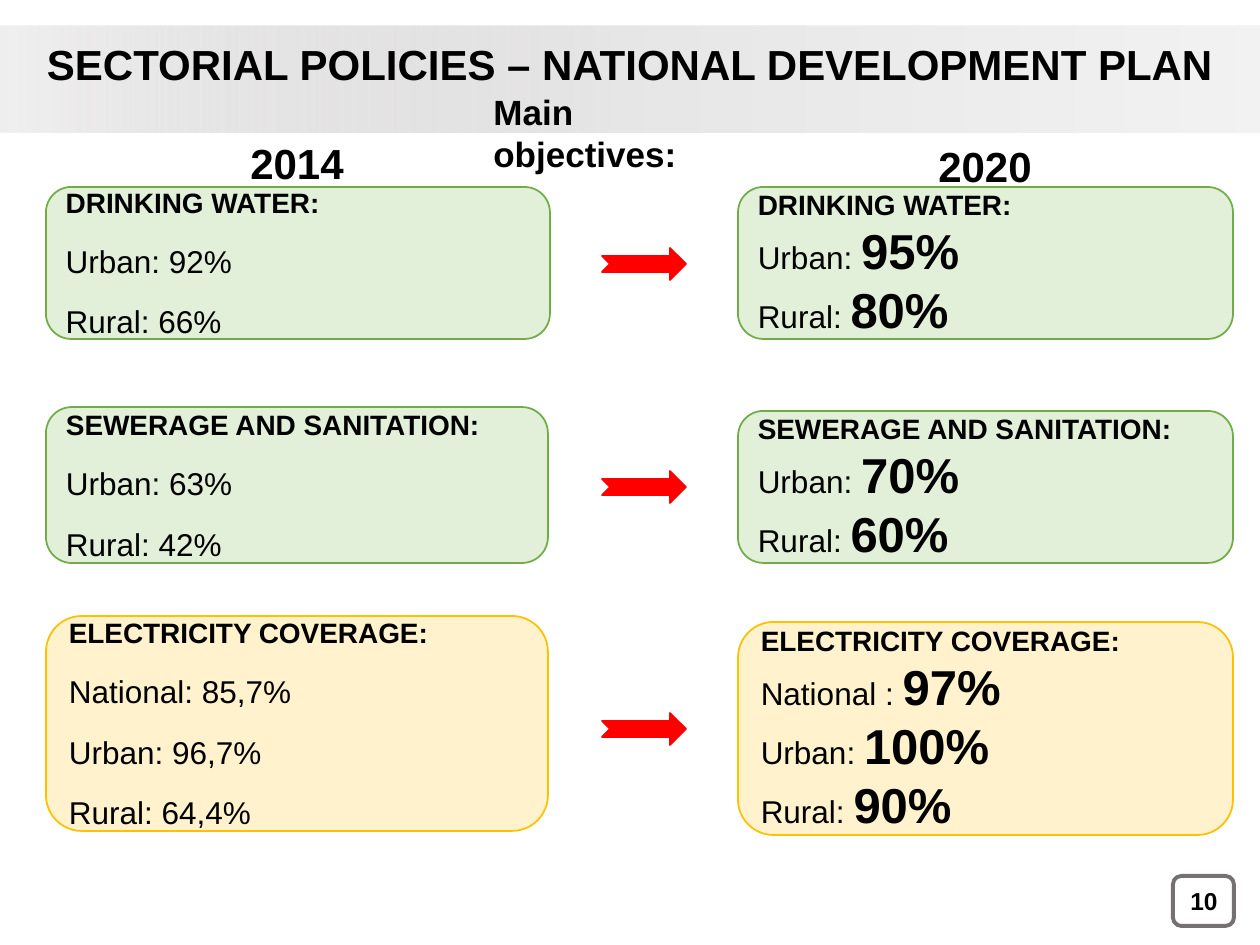
from lxml.etree import SubElement
from pptx import Presentation
from pptx.dml.color import RGBColor
from pptx.enum.shapes import MSO_SHAPE
from pptx.enum.text import MSO_ANCHOR, MSO_AUTO_SIZE, PP_ALIGN
from pptx.oxml.ns import qn
from pptx.util import Pt

SCALE = 914400 / 126
COLORS = {
    "black": "000000", "red": "FF0000", "frame": "767171",
    "green": "E2F0D9", "leaf": "70AD47", "cream": "FFF2CC", "gold": "FFC000",
}
BAND = [(0, "C3C2C2", 25), (49, "E7E6E6", 100), (100, "F2F2F2", 100)]
# Each row: heading, fill, line, arrow top, (left top, width, height), (right top, height), rates
ROWS = [
    ("DRINKING WATER:", "green", "leaf", 248, (187, 504, 152), (187, 152),
     [("Urban: ", "92%", "95%"), ("Rural: ", "66%", "80%")]),
    ("SEWERAGE AND SANITATION:", "green", "leaf", 471, (407, 502, 156), (411, 152),
     [("Urban: ", "63%", "70%"), ("Rural: ", "42%", "60%")]),
    ("ELECTRICITY COVERAGE:", "cream", "gold", 713, (616, 502, 215), (622, 213),
     [("National: ", "85,7%", "97%"), ("Urban: ", "96,7%", "100%"),
      ("Rural: ", "64,4%", "90%")]),
]


def px(*vals):
    return [round(v * SCALE) for v in vals]


def color(name):
    return RGBColor.from_string(COLORS[name])


def style(run, size, bold=True):
    font = run.font
    font.name, font.size, font.bold = "Arial", Pt(size), bold
    font.color.rgb = color("black")


def put(frame, text, size, align):
    frame.text = text
    para = frame.paragraphs[0]
    para.alignment = align
    style(para.runs[0], size)


def label(slide, box, text, size, align, wrap=True):
    frame = slide.shapes.add_textbox(*px(*box)).text_frame
    frame.word_wrap = wrap
    put(frame, text, size, align)
    return frame


def block(slide, kind, box, fill, line, width=1):
    shape = slide.shapes.add_shape(kind, *px(*box))
    shape.shadow.inherit = False
    if fill:
        shape.fill.solid()
        shape.fill.fore_color.rgb = color(fill)
    else:
        shape.fill.background()
    if line:
        shape.line.color.rgb = color(line)
        shape.line.width = Pt(width)
    else:
        shape.line.fill.background()
    return shape


def band(slide):
    """Add the grey strip behind the title, fading in from the left."""
    shape = block(slide, MSO_SHAPE.RECTANGLE, (0, 26, 1260, 107), None, None)
    shape.fill.gradient()
    shape.fill.gradient_angle = 0
    stops = shape._element.spPr.find(".//" + qn("a:gsLst"))
    for stop in list(stops):
        stops.remove(stop)
    for pos, tone, alpha in BAND:
        stop = SubElement(stops, qn("a:gs"), pos=str(pos * 1000))
        clr = SubElement(stop, qn("a:srgbClr"), val=tone)
        if alpha < 100:
            SubElement(clr, qn("a:alpha"), val=str(alpha * 1000))
    slide.shapes.title._element.addprevious(shape._element)


def title(slide, text):
    shape = slide.shapes.title
    shape.left, shape.top, shape.width, shape.height = px(0, 32, 1260, 63)
    frame = shape.text_frame
    frame.auto_size = MSO_AUTO_SIZE.NONE
    frame.vertical_anchor = MSO_ANCHOR.TOP
    put(frame, text, 24, PP_ALIGN.CENTER)


def card(slide, box, fill, line, head, rates, size, bold, gap):
    shape = block(slide, MSO_SHAPE.ROUNDED_RECTANGLE, box, fill, line)
    frame = shape.text_frame
    frame.word_wrap = True
    frame.vertical_anchor = MSO_ANCHOR.MIDDLE
    put(frame, head, 16, PP_ALIGN.LEFT)
    for name, rate in rates:
        para = frame.add_paragraph()
        para.alignment = PP_ALIGN.LEFT
        para.space_before = Pt(gap)
        for text, pts, heavy in ((name, 18, False), (rate, size, bold)):
            run = para.add_run()
            run.text = text
            style(run, pts, heavy)


def row(slide, head, fill, line, mid, left, right, rates):
    top, width, height = left
    old = [(name, was) for name, was, _ in rates]
    card(slide, (46, top, width, height), fill, line, head, old, 18, False, 13)
    top, height = right
    new = [(name.replace("National:", "National :"), goal) for name, _, goal in rates]
    card(slide, (738, top, 495, height), fill, line, head, new, 28, True, 0)
    block(slide, MSO_SHAPE.NOTCHED_RIGHT_ARROW, (602, mid, 84, 32), "red", "red")


def main():
    deck = Presentation()
    deck.slide_width, deck.slide_height = px(1260, 945)
    slide = deck.slides.add_slide(deck.slide_layouts[5])
    title(slide, "SECTORIAL POLICIES – NATIONAL DEVELOPMENT PLAN")
    band(slide)
    label(slide, (481, 84, 297, 55), "Main objectives:", 20, PP_ALIGN.JUSTIFY)
    label(slide, (237, 131, 120, 63), "2014", 24, PP_ALIGN.CENTER, False)
    label(slide, (925, 134, 120, 63), "2020", 24, PP_ALIGN.CENTER, False)
    for data in ROWS:
        row(slide, *data)
    block(slide, MSO_SHAPE.ROUNDED_RECTANGLE, (1173, 876, 61, 50), None, "frame", 2.25)
    page = label(slide, (946, 876, 284, 50), "10", 14, PP_ALIGN.RIGHT)
    page.vertical_anchor = MSO_ANCHOR.MIDDLE
    deck.save("out.pptx")


if __name__ == "__main__":
    main()
